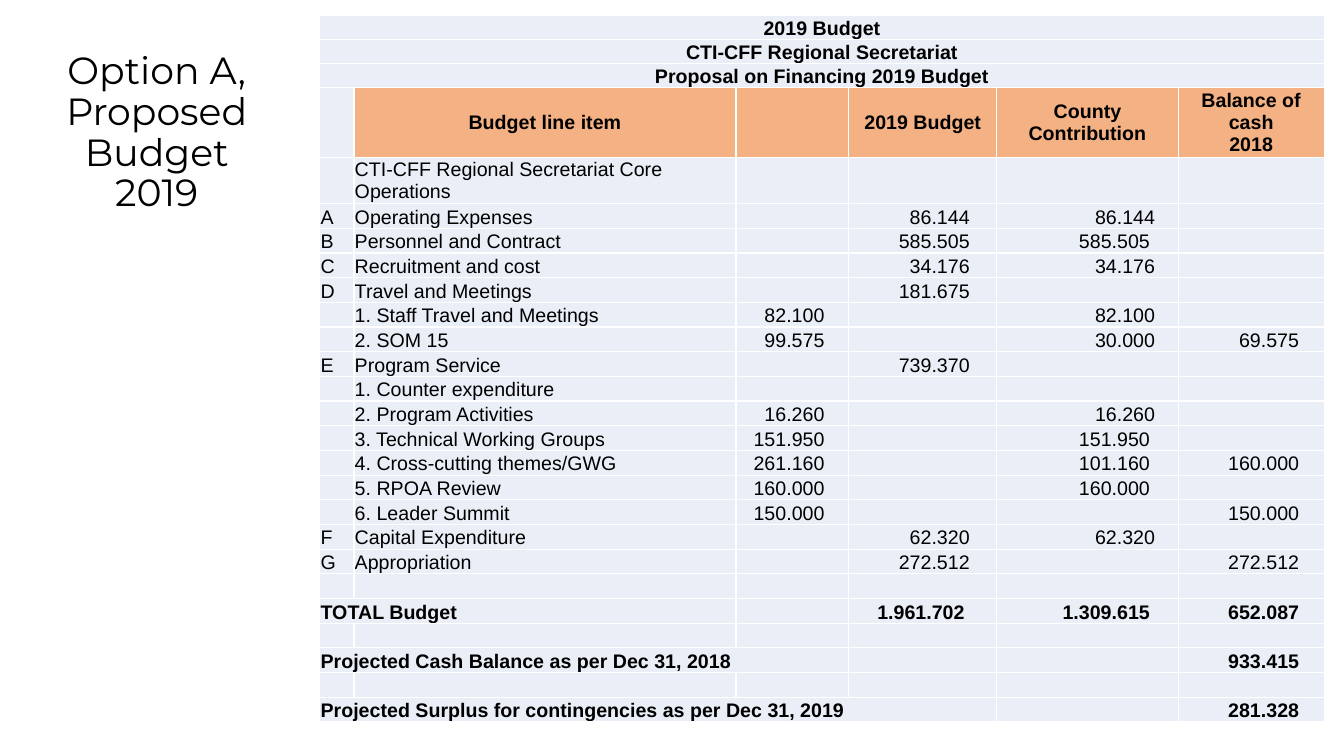
from lxml import etree
from pptx import Presentation
from pptx.dml.color import RGBColor
from pptx.enum.text import MSO_ANCHOR, MSO_AUTO_SIZE, PP_ALIGN
from pptx.oxml.ns import qn
from pptx.util import Cm, Pt

LEFT, MID, RIGHT = PP_ALIGN.LEFT, PP_ALIGN.CENTER, PP_ALIGN.RIGHT
CENTRE, BASE = MSO_ANCHOR.MIDDLE, MSO_ANCHOR.BOTTOM
FIXED = MSO_AUTO_SIZE.NONE

COLORS = {"text": "000000", "pale": "EAEFF7", "head": "F4B183", "rule": "FFFFFF"}
COLS = [0.86, 9.63, 2.84, 3.73, 4.57, 3.68]
PADS = {2: (0.61, 9), 3: (0.68, 7), 4: (0.58, 6), 5: (0.63, 9)}
TITLES = ["2019 Budget", "CTI-CFF Regional Secretariat", "Proposal on Financing 2019 Budget"]
HEAD = ["", "Budget line item", "", "2019 Budget", "County Contribution", "Balance of cash\v2018"]
ITEMS = [
    ["", "CTI-CFF Regional Secretariat Core Operations", "", "", "", ""],
    ["A", "Operating Expenses", "", "86.144", "86.144", ""],
    ["B", "Personnel and Contract", "", "585.505", "585.505", ""],
    ["C", "Recruitment and cost", "", "34.176", "34.176", ""],
    ["D", "Travel and Meetings", "", "181.675", "", ""],
    ["", "1. Staff Travel and Meetings", "82.100", "", "82.100", ""],
    ["", "2. SOM 15", "99.575", "", "30.000", "69.575"],
    ["E", "Program Service", "", "739.370", "", ""],
    ["", "1. Counter expenditure", "", "", "", ""],
    ["", "2. Program Activities", "16.260", "", "16.260", ""],
    ["", "3. Technical Working Groups", "151.950", "", "151.950", ""],
    ["", "4. Cross-cutting themes/GWG", "261.160", "", "101.160", "160.000"],
    ["", "5. RPOA Review", "160.000", "", "160.000", ""],
    ["", "6. Leader Summit", "150.000", "", "", "150.000"],
    ["F", "Capital Expenditure", "", "62.320", "62.320", ""],
    ["G", "Appropriation", "", "272.512", "", "272.512"],
]
GAP = [""] * 6
TOTALS = [
    GAP,
    ["TOTAL Budget", "", "", "1.961.702", "1.309.615", "652.087"],
    GAP,
    ["Projected Cash Balance as per Dec 31, 2018", "", "", "", "", "933.415"],
    GAP,
    ["Projected Surplus for contingencies as per Dec 31, 2019", "", "", "", "", "281.328"],
]
ROWS = [[name] + [""] * 5 for name in TITLES] + [HEAD] + ITEMS + TOTALS
TOP = len(TITLES)
END = TOP + 1 + len(ITEMS)
SPANS = {0: 6, 1: 6, 2: 6, END + 1: 2, END + 3: 3, END + 5: 4}
HIGH = {0: 0.6, 1: 0.6, 2: 0.6, TOP: 1.76, TOP + 1: 1.17}


def apply(item, form):
    """Set every attribute named in a dict of format values."""
    for name, value in form.items():
        setattr(item, name, value)


def style(font, form):
    """Format a font in the text colour."""
    apply(font, form)
    font.color.rgb = RGBColor.from_string(COLORS["text"])


def border(cell):
    """Draw thin lines on all four sides of a cell."""
    props = cell._tc.get_or_add_tcPr()
    for spot, side in enumerate(("lnL", "lnR", "lnT", "lnB")):
        line = etree.Element(qn("a:" + side), w=str(Pt(1)))
        fill = etree.SubElement(line, qn("a:solidFill"))
        etree.SubElement(fill, qn("a:srgbClr"), val=COLORS["rule"])
        props.insert(spot, line)


def fill_cell(cell, row, col, text):
    """Write and format one cell of the budget table."""
    number = TOP < row and col in PADS
    pad, limit = PADS[col] if number else (0.02, 99)
    apply(cell, {
        "margin_left": Cm(0.02), "margin_top": Cm(0.02), "margin_bottom": 0,
        "margin_right": Cm(pad + 0.13 * (len(text) > limit)),
        "vertical_anchor": CENTRE if row in (TOP, TOP + 1) else BASE,
    })
    cell.fill.solid()
    shade = "head" if row == TOP and col else "pale"
    cell.fill.fore_color.rgb = RGBColor.from_string(COLORS[shade])
    border(cell)
    para = cell.text_frame.paragraphs[0]
    if not text:
        etree.SubElement(para._p, qn("a:endParaRPr"), sz="1400")
        return
    cell.text = text
    para = cell.text_frame.paragraphs[0]
    para.alignment = MID if row <= TOP else RIGHT if number else LEFT
    for run in para.runs:
        style(run.font, {"size": Pt(14), "name": "Arial", "bold": row <= TOP or row >= END})


def add_title(slide, left, top, width, height):
    """Place the slide title in its box."""
    frame = slide.shapes.add_textbox(Cm(left), Cm(top), Cm(width), Cm(height)).text_frame
    apply(frame, {"word_wrap": True, "auto_size": FIXED, "vertical_anchor": CENTRE,
                  "margin_bottom": Cm(1.17)})
    para = frame.paragraphs[0]
    apply(para, {"text": "Option A, Proposed Budget 2019", "alignment": MID, "line_spacing": 0.9})
    style(para.runs[0].font, {"size": Pt(27), "name": "Montserrat"})


def add_budget(slide, left, top, width, height):
    """Place the budget table in its box."""
    table = slide.shapes.add_table(
        len(ROWS), len(COLS), Cm(left), Cm(top), Cm(width), Cm(height)).table
    apply(table, {"first_row": False, "horz_banding": False})
    for col, size in enumerate(COLS):
        table.columns[col].width = Cm(size)
    for row, texts in enumerate(ROWS):
        table.rows[row].height = Cm(HIGH.get(row, 0.62))
        for col, text in enumerate(texts):
            fill_cell(table.cell(row, col), row, col, text)
    for row, span in SPANS.items():
        table.cell(row, 0).merge(table.cell(row, span - 1))


def main():
    """Build the budget slide and save it."""
    deck = Presentation()
    apply(deck, {"slide_width": Cm(33.87), "slide_height": Cm(19.05)})
    slide = deck.slides.add_slide(deck.slide_layouts[6])
    add_title(slide, 1.22, 1.8, 5.46, 4.17)
    add_budget(slide, 8.06, 0.4, sum(COLS), 17.75)
    deck.save("out.pptx")


if __name__ == "__main__":
    main()
